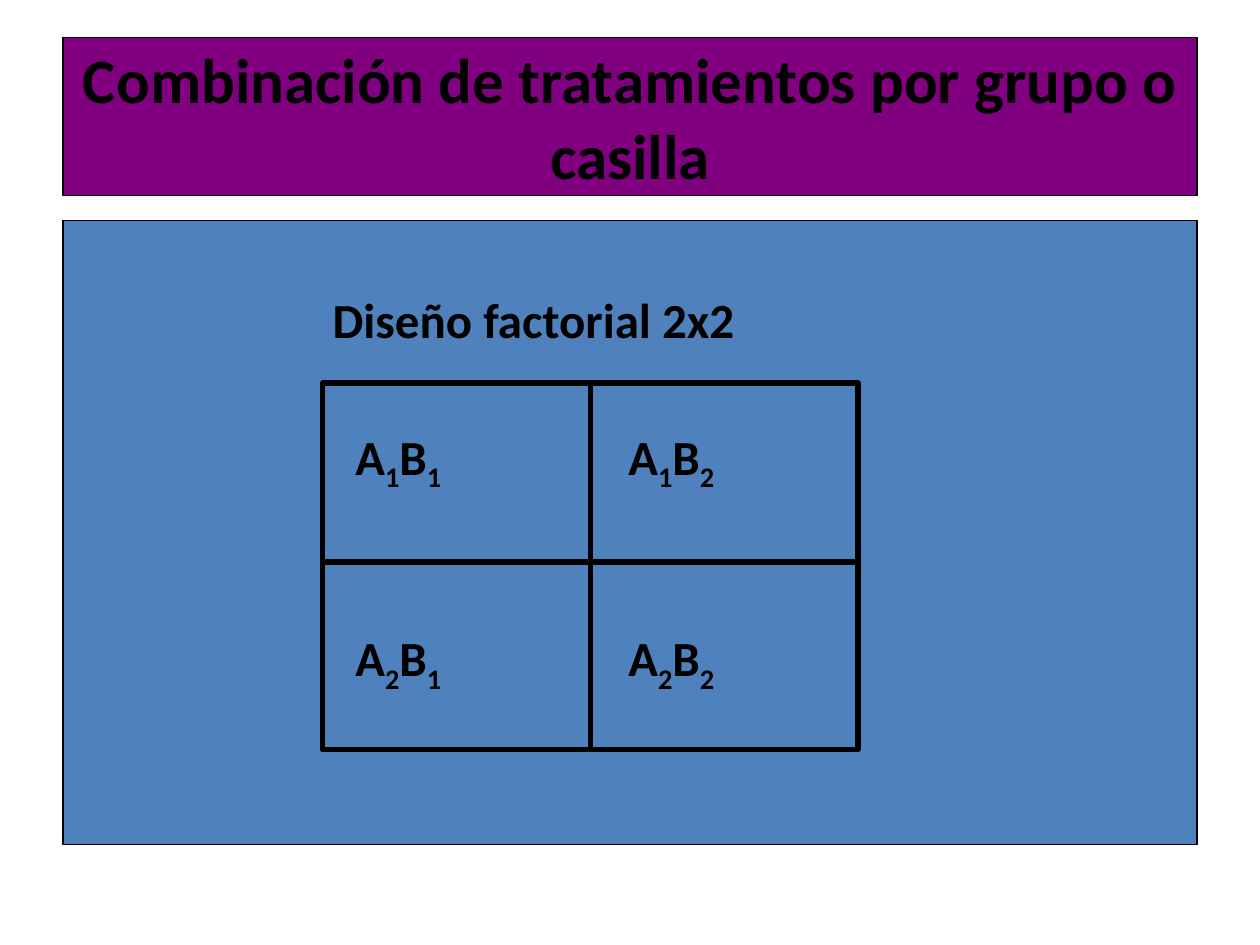
from lxml import etree
from pptx import Presentation
from pptx.dml.color import RGBColor
from pptx.enum import shapes, text
from pptx.oxml import ns
from pptx.util import Pt

HUES = {"ink": "000000", "band": "800080", "panel": "4F81BD"}


def hue(name):
    return RGBColor.from_string(HUES[name])


def style(shape, fill=None, width=0.75):
    if fill:
        shape.fill.solid()
        shape.fill.fore_color.rgb = hue(fill)
    else:
        shape.fill.background()
    shape.line.color.rgb = hue("ink")
    shape.line.width = Pt(width)


def write(para, words, size=28, align="LEFT", gap=0, lead=1.0, left=0, first=0):
    """Fill a paragraph; a part after an underscore starts with a subscript digit."""
    para.alignment = getattr(text.PP_ALIGN, align)
    para.space_before = Pt(gap)
    para.line_spacing = lead
    props = para._p.get_or_add_pPr()
    props.set("marL", str(Pt(left)))
    props.set("indent", str(Pt(first)))
    head, *rest = words.split("_")
    parts = [(head, False)]
    for part in rest:
        parts += [(part[0], True), (part[1:], False)]
    for part, low in parts:
        if not part:
            continue
        run = para.add_run()
        run.text = part
        font = run.font
        font.name, font.size, font.bold = "Calibri", Pt(size), True
        font.color.rgb = hue("ink")
        if low:
            run._r.get_or_add_rPr().set("baseline", "-25000")


def add_rect(slide, x, y, w, h, **look):
    rect = slide.shapes.add_shape(
        shapes.MSO_SHAPE.RECTANGLE, Pt(x), Pt(y), Pt(w), Pt(h))
    rect.shadow.inherit = False
    style(rect, **look)
    return rect


def add_rule(slide, x1, y1, x2, y2):
    rule = slide.shapes.add_connector(
        shapes.MSO_CONNECTOR.STRAIGHT, Pt(x1), Pt(y1), Pt(x2), Pt(y2))
    rule.line.color.rgb = hue("ink")
    rule.line.width = Pt(3)
    etree.SubElement(rule._element.spPr, ns.qn("a:effectLst"))
    return rule


def add_title(slide, x, y, w, h):
    title = slide.shapes.title
    title.left, title.top, title.width, title.height = map(Pt, (x, y, w, h))
    style(title, fill="band")
    frame = title.text_frame
    frame.vertical_anchor = text.MSO_ANCHOR.MIDDLE
    write(frame.paragraphs[0], "Combinación de tratamientos por grupo o casilla",
          size=36, align="CENTER")


def add_panel(slide, x, y, w, h):
    """Panel with the heading and one line of text for each row of the grid."""
    frame = add_rect(slide, x, y, w, h, fill="panel").text_frame
    frame.word_wrap = True
    frame.vertical_anchor = text.MSO_ANCHOR.TOP
    frame.margin_top = Pt(43.4)
    write(frame.paragraphs[0], "Diseño factorial 2x2", lead=0.9, left=147)
    for row, gap in ((1, 44.6), (2, 80.6)):
        cells = "\t".join(f"A_{row}B_{col}" for col in (1, 2))
        # The tab runs to the hanging indent, where the second column starts.
        write(frame.add_paragraph(), cells, lead=0.9, gap=gap,
              left=316, first=-156)


def add_grid(slide, x, y, w, h, split):
    box = add_rect(slide, x, y, w, h, width=3)
    mid = add_rule(slide, x + w / 2, y, x + w / 2, y + h)
    mid.begin_connect(box, 0)
    mid.end_connect(box, 2)
    add_rule(slide, x, y + split, x + w, y + split)


def main():
    deck = Presentation()
    deck.slide_width, deck.slide_height = Pt(720), Pt(540)
    slide = deck.slides.add_slide(deck.slide_layouts[5])
    add_title(slide, 36, 21.6, 648, 90)
    add_panel(slide, 36, 126, 648, 356.4)
    add_grid(slide, 184.3, 218.9, 306, 209.5, split=102.2)
    deck.save("out.pptx")


if __name__ == "__main__":
    main()
